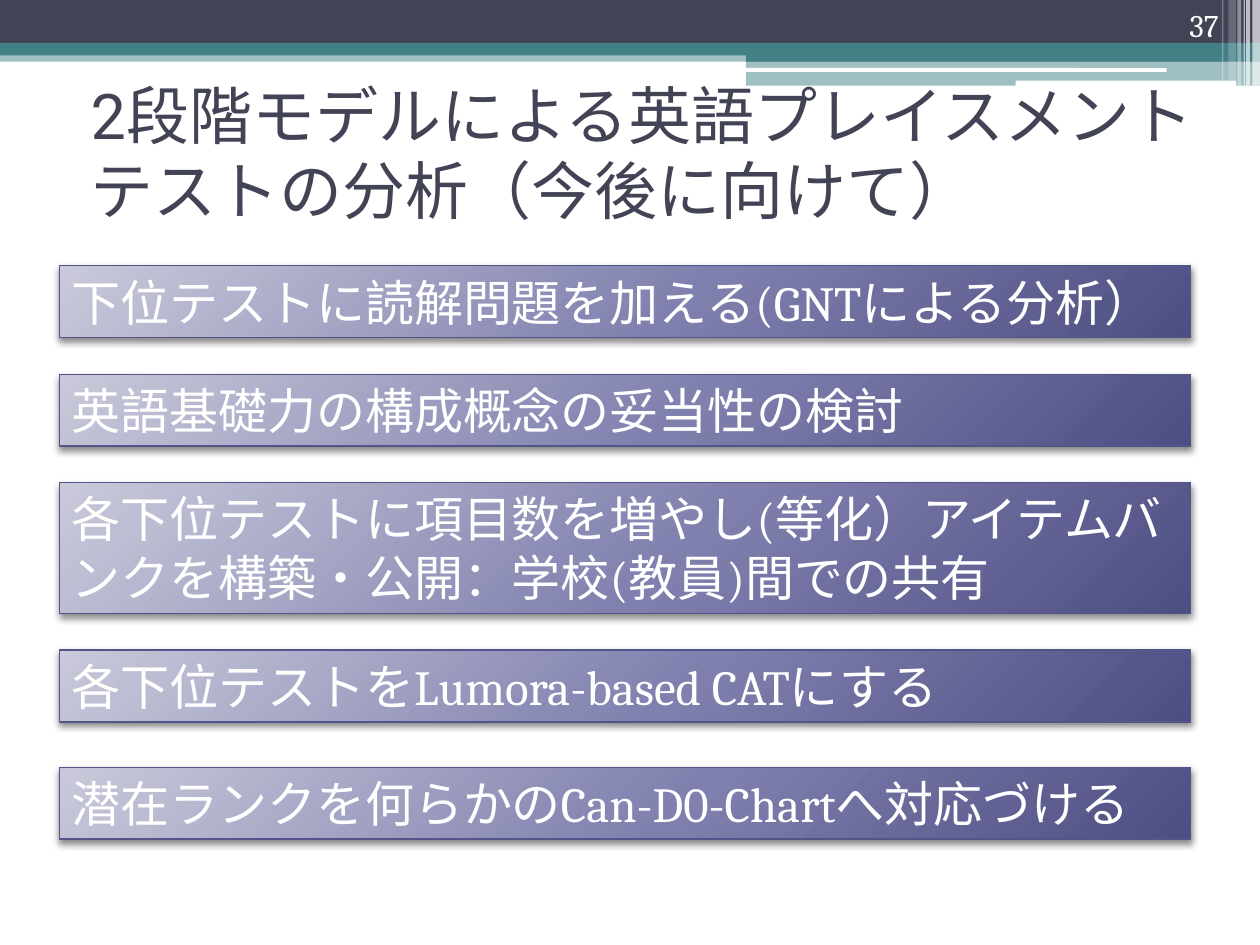
from pptx import Presentation
from pptx.dml.color import RGBColor
from pptx.enum.shapes import MSO_SHAPE
from pptx.enum.text import MSO_ANCHOR, MSO_AUTO_SIZE, PP_ALIGN
from pptx.oxml import parse_xml
from pptx.oxml.ns import nsdecls
from pptx.util import Inches, Pt

RECT, ROUND = MSO_SHAPE.RECTANGLE, MSO_SHAPE.ROUNDED_RECTANGLE
COLORS = {"navy": "424456", "teal": "438086", "white": "FFFFFF", "edge": "53548A",
          "light": "C9C9DA", "mid": "7F80AE", "dark": "4D4E81", "shadow": "000000"}
TITLE = "2段階モデルによる英語プレイスメントテストの分析（今後に向けて）"
PAGE = "37"
SLIDE_W, SLIDE_H = 10, 7.5

# left, top, width, height, colour, opacity in percent
BANDS = [
    (0, 0.4, SLIDE_W, 0.09, "teal", 50),
    (0, 0, SLIDE_W, 0.34, "navy", 100),
    (0, 0.34, SLIDE_W, 0.1, "teal", 100),
    (5.92, 0.39, 4.08, 0.1, "teal", 100),
    (5.92, 0.48, 4.08, 0.2, "teal", 50),
]
RULES = [
    (5.91, 0.54, 3.35, 0.03, "white", 100),
    (8.06, 0.64, 1.75, 0.05, "white", 100),
]
# left, width, height, opacity in percent
STRIPES = [(9.94, 0.06, 0.68, 65), (9.89, 0.03, 0.68, 65), (9.87, 0.01, 0.68, 60),
           (9.82, 0.03, 0.68, 40), (9.75, 0.06, 0.64, 20), (9.7, 0.01, 0.64, 30)]

BAR_LEFT, BAR_W = 0.47, 8.98
BAR_H = {1: 0.57, 2: 1.04}  # by number of text lines
# top, text lines, text
BARS = [
    (2.11, 1, "下位テストに読解問題を加える(GNTによる分析）"),
    (2.97, 1, "英語基礎力の構成概念の妥当性の検討"),
    (3.83, 2, "各下位テストに項目数を増やし(等化）アイテムバンクを構築・公開：学校(教員)間での共有"),
    (5.16, 1, "各下位テストをLumora-based CATにする"),
    (6.09, 1, "潜在ランクを何らかのCan-D0-Chartへ対応づける"),
]
GRADIENT = [(0, "light"), (55, "mid"), (100, "dark")]


def rgb(name):
    return RGBColor.from_string(COLORS[name])


def add_box(s, kind, left, top, width, height):
    sp = s.shapes.add_shape(kind, *map(Inches, (left, top, width, height)))
    sp.shadow.inherit = False
    return sp


def add_band(s, kind, left, top, width, height, color, opacity):
    sp = add_box(s, kind, left, top, width, height)
    sp.fill.solid()
    sp.fill.fore_color.rgb = rgb(color)
    sp.line.fill.background()
    if opacity < 100:
        clr = sp._element.spPr.find(".//{*}srgbClr")
        clr.append(parse_xml(f'<a:alpha {nsdecls("a")} val="{opacity * 1000}"/>'))


def write(shape, text, size, font, color, align=PP_ALIGN.LEFT, anchor=MSO_ANCHOR.MIDDLE):
    tf = shape.text_frame
    tf.text = text
    tf.word_wrap = True
    tf.vertical_anchor = anchor
    p = tf.paragraphs[0]
    p.alignment = align
    p.font.size, p.font.name = Pt(size), font
    p.font.color.rgb = rgb(color)
    return tf


def add_bar(s, top, lines, text):
    sp = add_box(s, RECT, BAR_LEFT, top, BAR_W, BAR_H[lines])
    spPr = sp._element.spPr
    stops = "".join(f'<a:gs pos="{pos * 1000}"><a:srgbClr val="{COLORS[c]}"/></a:gs>'
                    for pos, c in GRADIENT)
    spPr.find("{*}prstGeom").addnext(parse_xml(
        f'<a:gradFill {nsdecls("a")} rotWithShape="1"><a:gsLst>{stops}</a:gsLst>'
        '<a:path path="circle">'
        '<a:fillToRect l="-40000" t="-90000" r="140000" b="190000"/>'
        '</a:path></a:gradFill>'))
    sp.line.color.rgb = rgb("edge")
    sp.line.width = Pt(0.75)
    spPr.find("{*}effectLst").append(parse_xml(
        f'<a:outerShdw {nsdecls("a")} blurRad="{Pt(4)}" dist="{Pt(2)}" dir="5400000" '
        f'rotWithShape="0"><a:srgbClr val="{COLORS["shadow"]}">'
        '<a:alpha val="45000"/></a:srgbClr></a:outerShdw>'))
    tf = write(sp, text, 28, "Cambria", "white", anchor=MSO_ANCHOR.TOP)
    tf.auto_size = MSO_AUTO_SIZE.SHAPE_TO_FIT_TEXT


def main():
    prs = Presentation()
    prs.slide_width, prs.slide_height = Inches(SLIDE_W), Inches(SLIDE_H)
    s = prs.slides.add_slide(prs.slide_layouts[5])

    for band in BANDS:
        add_band(s, RECT, *band)
    for rule in RULES:
        add_band(s, ROUND, *rule)
    for left, width, height, opacity in STRIPES:
        add_band(s, RECT, left, 0, width, height, "white", opacity)

    title = s.shapes.title
    title.left, title.top, title.width, title.height = map(Inches, (0.62, 0.62, 9, 1.17))
    write(title, TITLE, 36, "Roboto", "navy").auto_size = MSO_AUTO_SIZE.NONE
    s.shapes._spTree.append(title._element)  # in front of the bands

    number = s.shapes.add_textbox(*map(Inches, (8.94, 0, 0.83, 0.4)))
    write(number, PAGE, 18, "Cambria", "white", PP_ALIGN.RIGHT, MSO_ANCHOR.BOTTOM)

    for bar in BARS:
        add_bar(s, *bar)
    prs.save("out.pptx")


if __name__ == "__main__":
    main()
